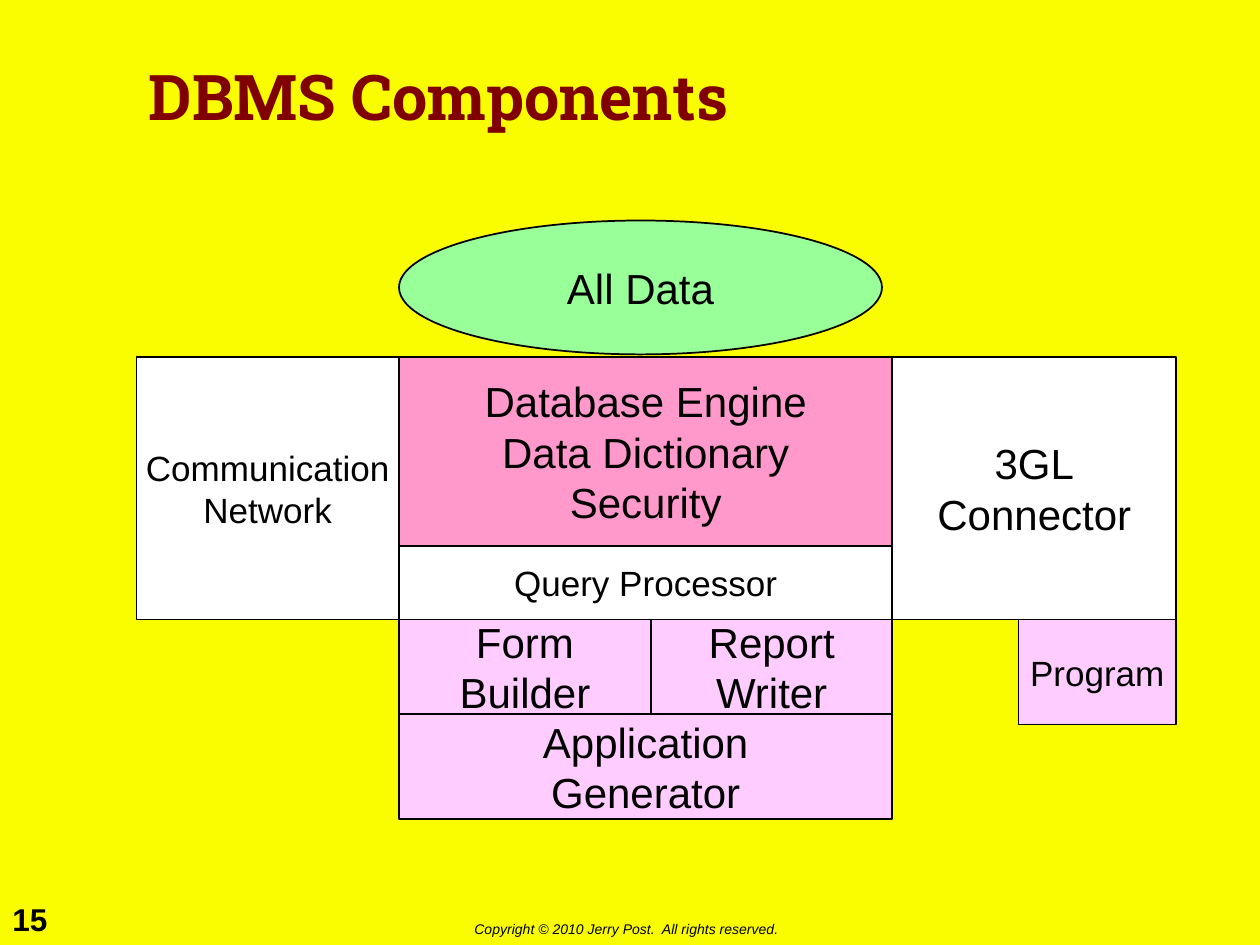
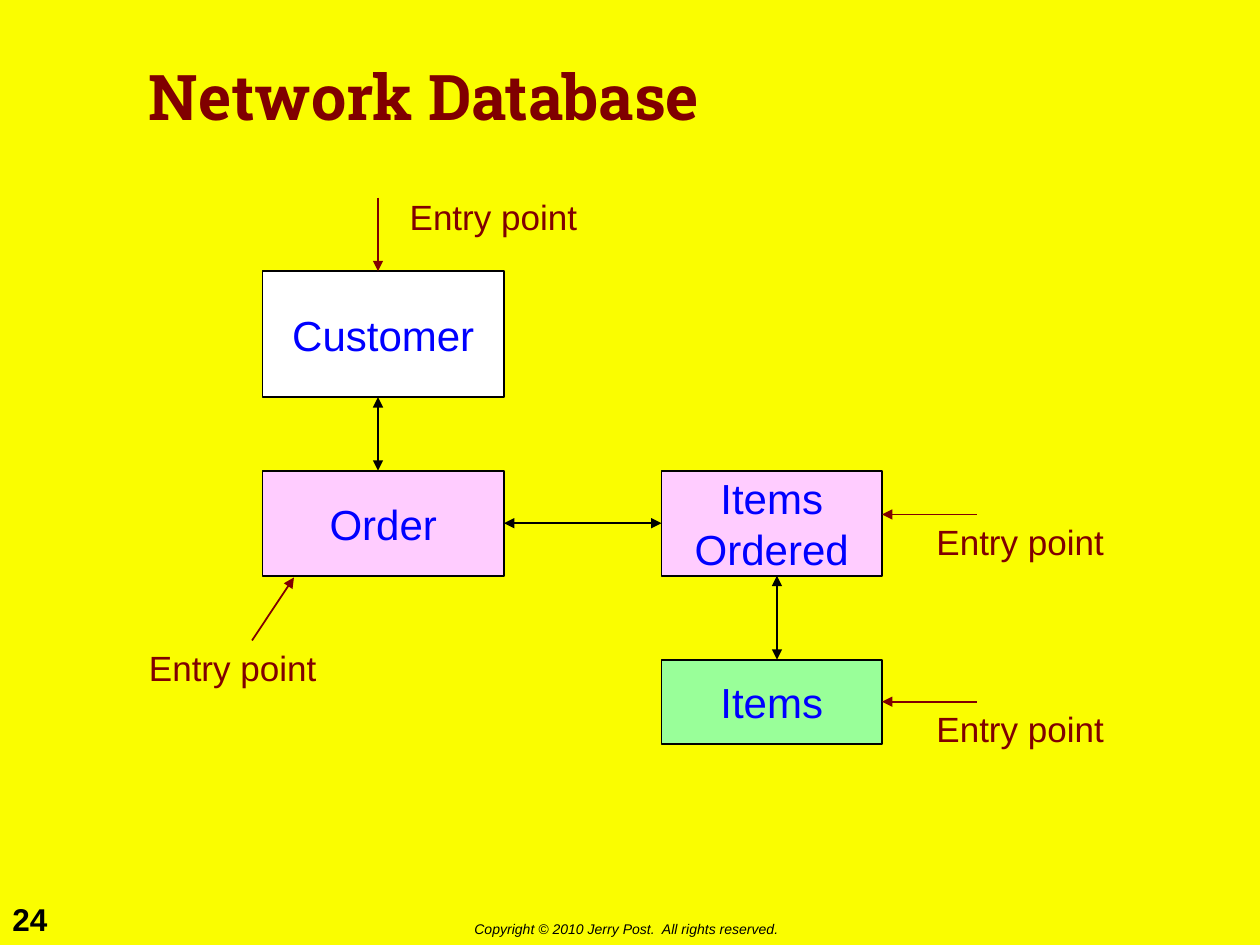
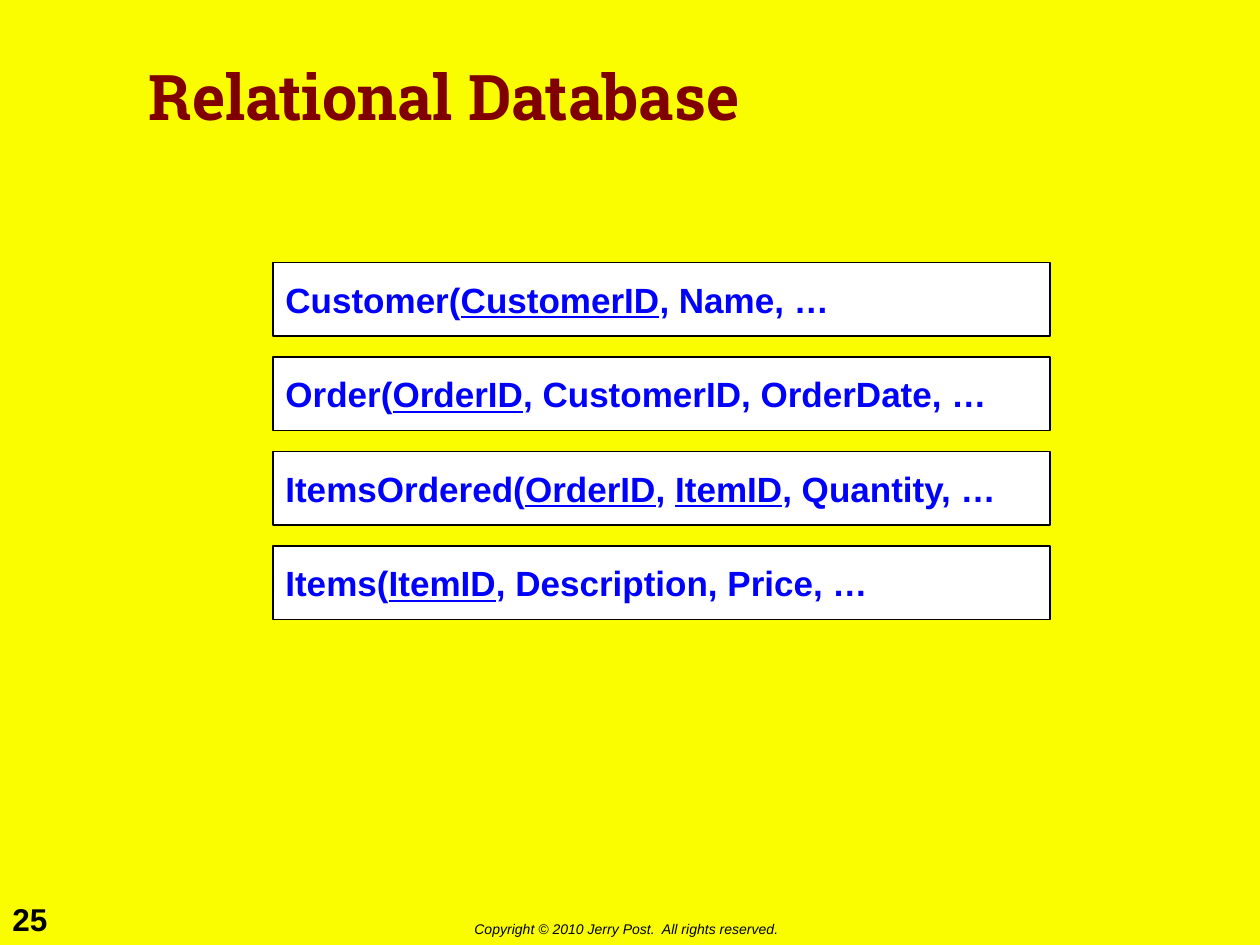
from dataclasses import dataclass

from lxml.etree import SubElement
from pptx import Presentation
from pptx.dml.color import RGBColor
from pptx.enum.shapes import MSO_CONNECTOR, MSO_SHAPE
from pptx.enum.text import MSO_ANCHOR, PP_ALIGN
from pptx.oxml.ns import qn
from pptx.util import Pt


@dataclass(frozen=True)
class Theme:
    back: str = "FAFD00"
    ink: str = "000000"
    accent: str = "800000"
    field: str = "0000FF"
    white: str = "FFFFFF"
    green: str = "99FF99"
    pink: str = "FF99CC"
    lilac: str = "FFCCFF"
    font: str = "Arial"
    head: str = "Roboto Slab"
    title: int = 36
    large: int = 24
    body: int = 20
    page: int = 18
    small: int = 8
    line: int = 1


@dataclass(frozen=True)
class Box:
    x: float
    y: float
    w: float
    h: float

    def inner(self, x, y, w, h):
        return Box(self.x + x, self.y + y, w, h)

    def points(self):
        return Pt(self.x), Pt(self.y), Pt(self.w), Pt(self.h)


THEME = Theme()
TITLE = Box(78, 12, 564, 90)
PAGE = Box(0, 511, 36, 29)
NOTICE = Box(264, 522.5, 191, 17.5)


def color(code):
    return RGBColor.from_string(code)


def style(run, size, tint, bold=False, italic=False, name=THEME.font):
    font = run.font
    font.name, font.size = name, Pt(size)
    font.bold, font.italic = bold, italic
    font.color.rgb = color(tint)


def label(slide, box, text, size, tint, wrap=False, **looks):
    frame = slide.shapes.add_textbox(*box.points()).text_frame
    frame.word_wrap = wrap
    frame.text = text
    style(frame.paragraphs[0].runs[0], size, tint, **looks)
    return frame


def block(slide, box, fill, kind=MSO_SHAPE.RECTANGLE):
    """Draw an outlined shape and return its text frame."""
    shape = slide.shapes.add_shape(kind, *box.points())
    shape.shadow.inherit = False
    shape.fill.solid()
    shape.fill.fore_color.rgb = color(fill)
    shape.line.color.rgb = color(THEME.ink)
    shape.line.width = Pt(THEME.line)
    frame = shape.text_frame
    frame.vertical_anchor = MSO_ANCHOR.MIDDLE
    return frame


def node(slide, box, text, fill, size=THEME.large, tint=THEME.ink, **kind):
    frame = block(slide, box, fill, **kind)
    frame.word_wrap = False
    frame.text = text
    for line in frame.paragraphs:
        line.alignment = PP_ALIGN.CENTER
        style(line.runs[0], size, tint)


def arrow(slide, box, start, end, tint, both=False):
    ends = [Pt(v) for x, y in (start, end) for v in (box.x + x, box.y + y)]
    link = slide.shapes.add_connector(MSO_CONNECTOR.STRAIGHT, *ends)
    link.line.color.rgb = color(tint)
    link.line.width = Pt(THEME.line)
    shape = link._element.spPr
    stroke = shape.find(qn("a:ln"))
    for tag in ("a:headEnd", "a:tailEnd") if both else ("a:tailEnd",):
        SubElement(stroke, qn(tag), type="triangle")
    SubElement(shape, qn("a:effectLst"))


def base(deck, title, number):
    """Add a slide with the shared background, title and footer."""
    slide = deck.slides.add_slide(deck.slide_layouts[6])
    slide.background.fill.solid()
    slide.background.fill.fore_color.rgb = color(THEME.back)
    label(slide, PAGE, str(number), THEME.page, THEME.ink, bold=True)
    label(slide, NOTICE, "Copyright © 2010 Jerry Post.  All rights reserved.",
          THEME.small, THEME.ink, italic=True)
    frame = label(slide, TITLE, title, THEME.title, THEME.accent, wrap=True,
                  bold=True, name=THEME.head)
    frame.vertical_anchor = MSO_ANCHOR.MIDDLE
    frame.paragraphs[0].line_spacing = 0.9
    return slide


def stack(slide, box):
    """Draw the engine with its tools below and its links on both sides."""
    left, right = 150, 432
    core = right - left
    top, query, tools, app = 78, 186, 228, 282
    split = 144
    node(slide, box.inner(left, 0, 276, 76.5), "All Data", THEME.green,
         kind=MSO_SHAPE.OVAL)
    blocks = (
        (left, top, core, query - top,
         "Database Engine\nData Dictionary\nSecurity", THEME.pink, THEME.large),
        (left, query, core, tools - query,
         "Query Processor", THEME.white, THEME.body),
        (left, tools, split, app - tools,
         "Form\nBuilder", THEME.lilac, THEME.large),
        (left + split, tools, core - split, app - tools,
         "Report\nWriter", THEME.lilac, THEME.large),
        (0, top, left, tools - top,
         "Communication\nNetwork", THEME.white, THEME.body),
        (right, top, box.w - right, tools - top,
         "3GL\nConnector", THEME.white, THEME.large),
        (box.w - 90, tools, 90, 60, "Program", THEME.lilac, THEME.body),
        (left, app, core, box.h - app,
         "Application\nGenerator", THEME.lilac, THEME.large),
    )
    for x, y, w, h, text, fill, size in blocks:
        node(slide, box.inner(x, y, w, h), text, fill, size)


def network(slide, box):
    nodes = (
        (72, 47, 138, 72, "Customer", THEME.white),
        (72, 161, 138, 60, "Order", THEME.lilac),
        (300, 161, 126, 60, "Items\nOrdered", THEME.lilac),
        (300, 269, 126, 48, "Items", THEME.green),
    )
    for x, y, w, h, text, fill in nodes:
        node(slide, box.inner(x, y, w, h), text, fill, tint=THEME.field)

    links = (
        ((138, 119), (138, 161)),
        ((210, 191), (300, 191)),
        ((366, 269), (366, 221)),
    )
    for start, end in links:
        arrow(slide, box, start, end, THEME.ink, both=True)

    entries = (
        ((138, 5), (138, 47), (149, 0)),
        ((480, 293), (426, 293), (450, 293)),
        ((66, 258), (90, 222), (0, 258)),
        ((480, 186), (426, 186), (450, 186)),
    )
    for start, end, spot in entries:
        arrow(slide, box, start, end, THEME.accent)
        label(slide, box.inner(*spot, 110, 31), "Entry point",
              THEME.body, THEME.accent)


def tables(slide, box):
    """List the tables in even rows; underscores enclose each key."""
    rows = (
        "Customer(_CustomerID_, Name, …",
        "Order(_OrderID_, CustomerID, OrderDate, …",
        "ItemsOrdered(_OrderID_, _ItemID_, Quantity, …",
        "Items(_ItemID_, Description, Price, …",
    )
    high = 42
    step = (box.h - high) / (len(rows) - 1)
    for i, row in enumerate(rows):
        frame = block(slide, box.inner(0, i * step, box.w, high), THEME.white)
        frame.word_wrap = True
        line = frame.paragraphs[0]
        line.alignment = PP_ALIGN.LEFT
        for j, text in enumerate(row.split("_")):
            run = line.add_run()
            run.text = text
            style(run, THEME.body, THEME.field, bold=True)
            run.font.underline = j % 2 == 1


def main():
    deck = Presentation()
    deck.slide_width, deck.slide_height = Pt(720), Pt(540)
    stack(base(deck, "DBMS Components", 15), Box(78, 126, 594, 342))
    network(base(deck, "Network Database", 24), Box(78, 108, 560, 317))
    tables(base(deck, "Relational Database", 25), Box(156, 150, 444, 204))
    deck.save("out.pptx")


if __name__ == "__main__":
    main()
